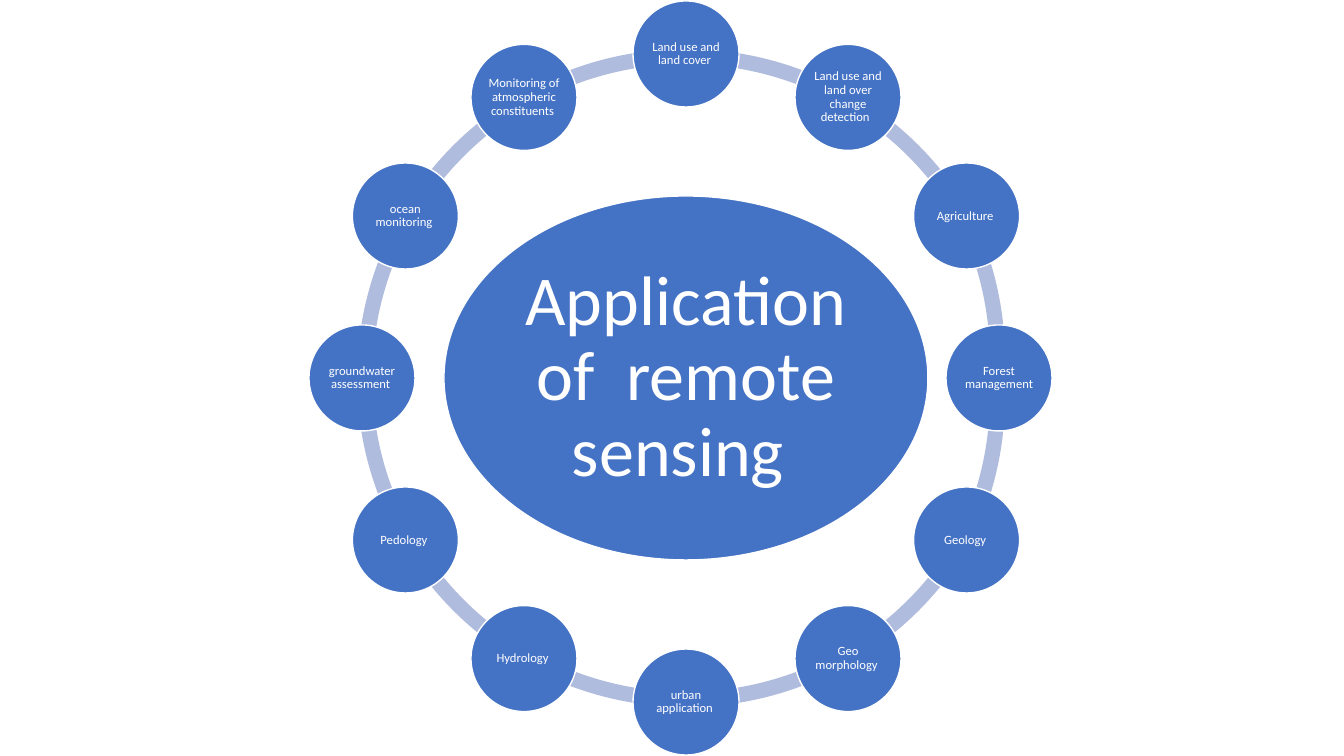
import math
from pptx import Presentation
from pptx.dml.color import RGBColor
from pptx.enum.shapes import MSO_SHAPE
from pptx.enum.text import MSO_ANCHOR, PP_ALIGN
from pptx.util import Pt

ELLIPSE, BLOCK_ARC = MSO_SHAPE.OVAL, MSO_SHAPE.BLOCK_ARC
MIDDLE, CENTER = MSO_ANCHOR.MIDDLE, PP_ALIGN.CENTER

# Content, clockwise from the top
TOPIC = "Application of  remote sensing "
APPLICATIONS = [
    "Land use and land cover ",
    "Land use and land over change detection  ",
    "Agriculture ",
    "Forest management",
    "Geology ",
    "Geo morphology ",
    "urban application ",
    "Hydrology ",
    "Pedology ",
    "groundwater assessment ",
    "ocean monitoring ",
    "Monitoring of atmospheric constituents ",
]
COLORS = {"disc": "4472C4", "ring": "B0BCDE", "white": "FFFFFF"}

# Geometry in px
EMU_PER_PX = 914400 / 100.8
SLIDE_W, SLIDE_H = 1344, 756
CENTER_X, CENTER_Y = 686, 378
ORBIT = 324
DISC = 106
TOPIC_W, TOPIC_H = 484, 364
RING = 658
RING_THICKNESS = 0.023
STEP = 360 / len(APPLICATIONS)

# The Forest management disc sits slightly inward, and its two arcs follow it
DISC_SHIFT = {3: -11}
# arc index: (x shift, y shift, start degrees, end degrees)
BENT_ARCS = {2: (-10, -19, 333.86, 3.41), 3: (-10, 19, 356.59, 26.14)}


def px(length):
    return round(length * EMU_PER_PX)


def color(name):
    return RGBColor.from_string(COLORS[name])


def add_centered(group, preset, x, y, width, height, fill):
    part = group.shapes.add_shape(
        preset, px(x - width / 2), px(y - height / 2), px(width), px(height))
    part.shadow.inherit = False
    part.fill.solid()
    part.fill.fore_color.rgb = color(fill)
    return part


def add_arc(group, index):
    start = (270 + index * STEP) % 360
    dx, dy, start, end = BENT_ARCS.get(
        index, (0, 0, start, (start + STEP) % 360))
    arc = add_centered(group, BLOCK_ARC, CENTER_X + dx, CENTER_Y + dy,
                       RING, RING, "ring")
    arc.line.fill.background()
    # Angles are stored in 60000ths of a degree, adjustments in 100000ths
    for slot, value in enumerate((start * 0.6, end * 0.6, RING_THICKNESS)):
        arc.adjustments[slot] = value


def add_disc(group, text, x, y, width, height, size, inset):
    disc = add_centered(group, ELLIPSE, x, y, width, height, "disc")
    disc.line.color.rgb = color("white")
    disc.line.width = Pt(1)
    frame = disc.text_frame
    frame_format = {"word_wrap": True, "vertical_anchor": MIDDLE}
    for side in ("left", "top", "right", "bottom"):
        frame_format[f"margin_{side}"] = px(inset)
    for name, value in frame_format.items():
        setattr(frame, name, value)
    paragraph = frame.paragraphs[0]
    paragraph.alignment = CENTER
    paragraph.line_spacing = 0.9
    run = paragraph.add_run()
    run.text = text
    for name, value in {"name": "Calibri", "size": Pt(size)}.items():
        setattr(run.font, name, value)
    run.font.color.rgb = color("white")


def main():
    deck = Presentation()
    deck.slide_width, deck.slide_height = px(SLIDE_W), px(SLIDE_H)
    slide = deck.slides.add_slide(deck.slide_layouts[6])
    cycle = slide.shapes.add_group_shape()

    # Ring behind the discs
    for index in reversed(range(len(APPLICATIONS))):
        add_arc(cycle, index)

    # Central topic
    add_disc(cycle, TOPIC, CENTER_X, CENTER_Y, TOPIC_W, TOPIC_H, 50, 7)

    # Applications around it
    for index, application in enumerate(APPLICATIONS):
        angle = math.radians(270 + index * STEP)
        x = CENTER_X + ORBIT * math.cos(angle) + DISC_SHIFT.get(index, 0)
        y = CENTER_Y + ORBIT * math.sin(angle)
        add_disc(cycle, application, x, y, DISC, DISC, 9, 1)

    deck.save("out.pptx")


if __name__ == "__main__":
    main()
